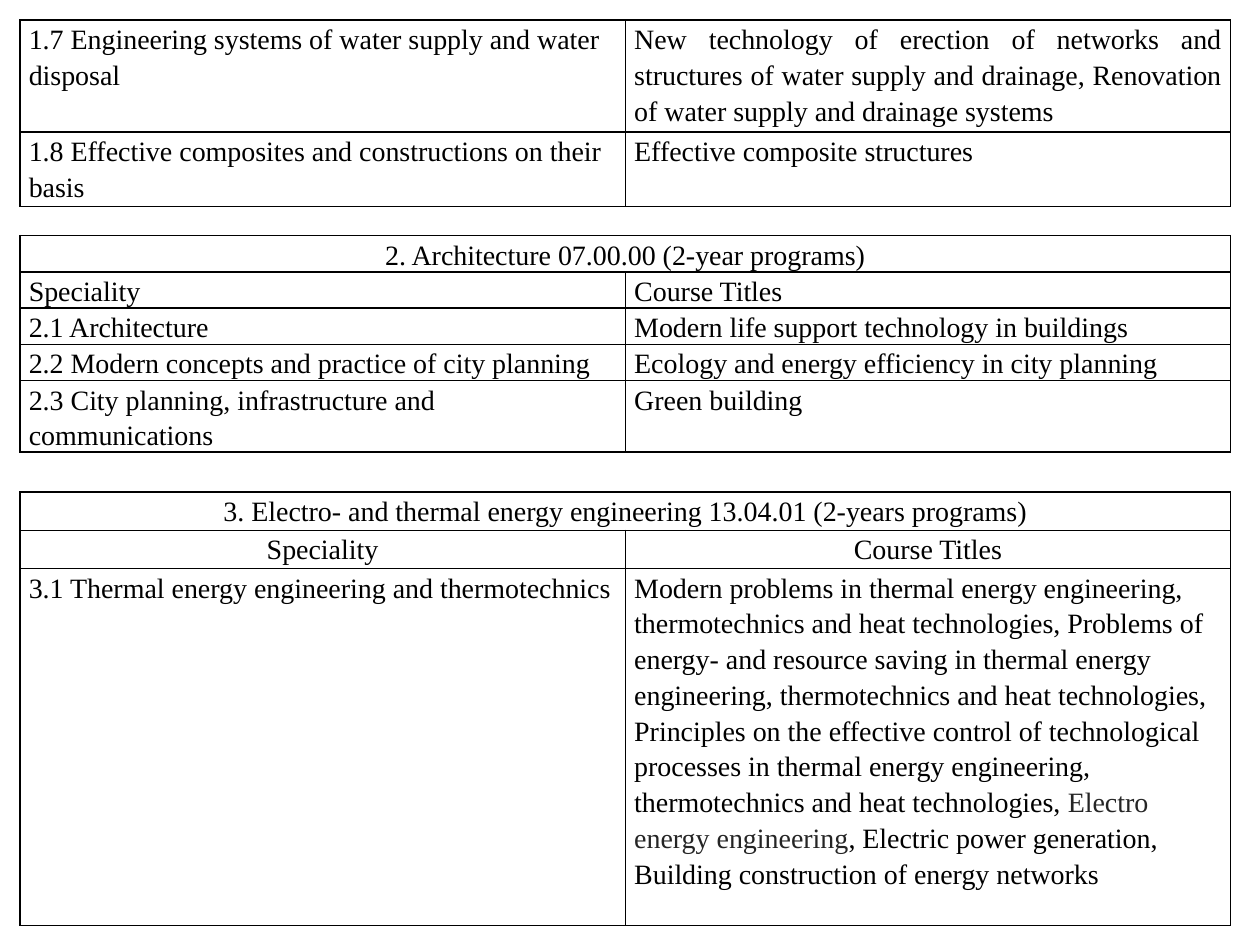
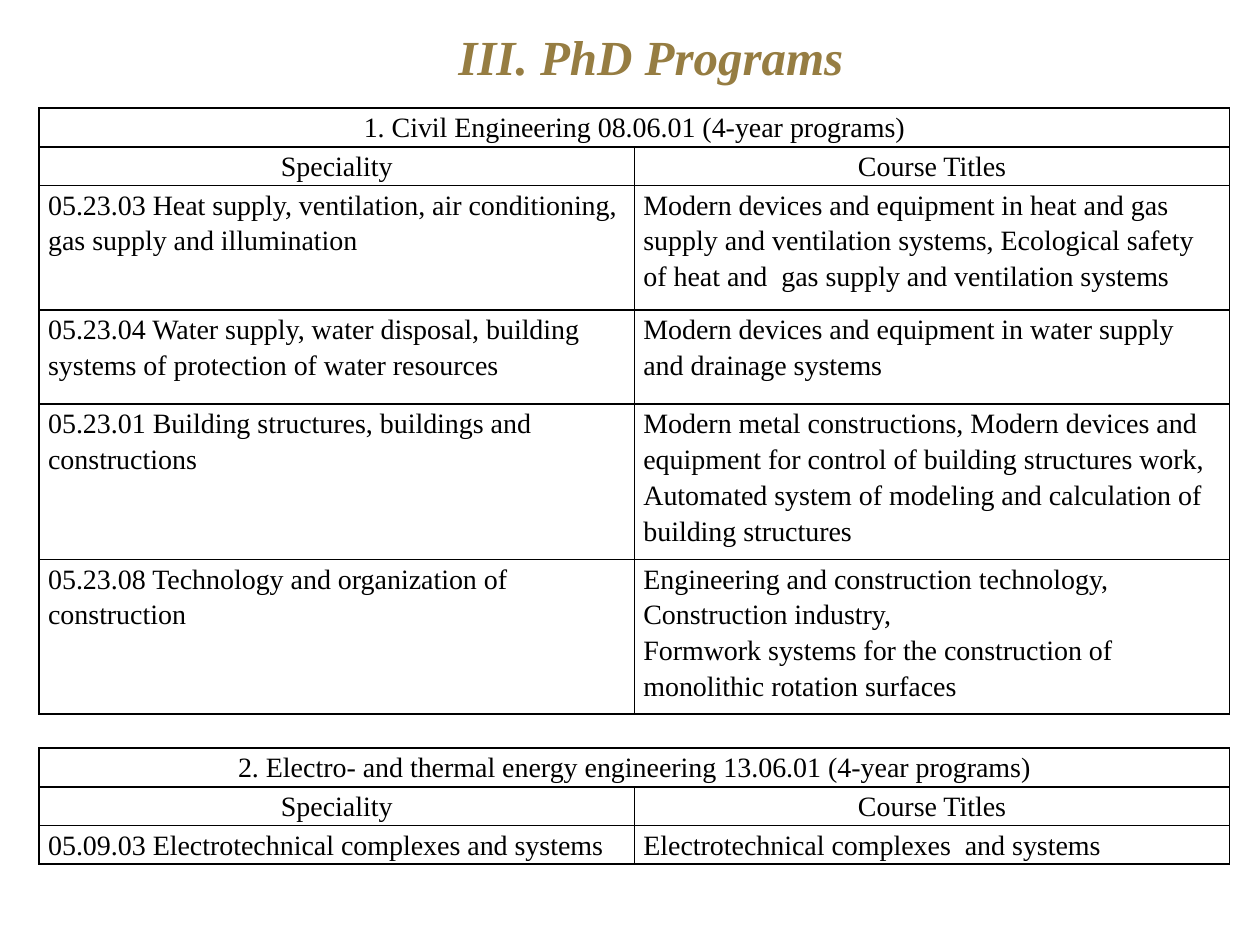
"""Builds two slides of course tables for master and PhD programs."""
from dataclasses import dataclass

from lxml import etree
from pptx import Presentation
from pptx.dml.color import RGBColor
from pptx.enum.text import MSO_ANCHOR, MSO_AUTO_SIZE, PP_ALIGN
from pptx.oxml.ns import qn
from pptx.util import Cm, Pt

LEFT, CENTER, JUSTIFY = PP_ALIGN.LEFT, PP_ALIGN.CENTER, PP_ALIGN.JUSTIFY
MIDDLE = MSO_ANCHOR.MIDDLE
GROW = MSO_AUTO_SIZE.SHAPE_TO_FIT_TEXT


@dataclass(frozen=True)
class Theme:
    font: str = "Times New Roman"
    ink: str = "000000"
    soft_ink: str = "252525"
    gold: str = "967D42"
    paper: str = "FFFFFF"
    body_pt: int = 16
    title_pt: int = 28
    border_pt: int = 1
    spacing: float = 1.15
    inset: float = 0.18


THEME = Theme()
HEADINGS = ("Speciality", "Course Titles")
BODY = {"size": Pt(THEME.body_pt), "name": THEME.font}
TITLE = {"size": Pt(THEME.title_pt), "name": THEME.font, "bold": True, "italic": True}

SLIDES = [
    {
        "left": 0.4, "width": 24.41,
        "tables": [
            {
                "top": 0.4, "heights": [2.26, 1.5], "body_align": {(0, 1): JUSTIFY},
                "rows": [
                    ("1.7 Engineering systems of water supply and water disposal",
                     "New technology of erection of networks and structures of water supply "
                     "and drainage, Renovation of water supply and drainage systems"),
                    ("1.8 Effective composites and constructions on their basis",
                     "Effective composite structures"),
                ],
            },
            {
                "top": 4.75, "heights": [0.73] * 4 + [1.43], "heading_align": LEFT,
                "caption": "2. Architecture 07.00.00 (2-year programs)",
                "rows": [
                    ("2.1 Architecture", "Modern life support technology in buildings"),
                    ("2.2 Modern concepts and practice of city planning",
                     "Ecology and energy efficiency in city planning"),
                    ("2.3 City planning, infrastructure and communications",
                     "Green building"),
                ],
            },
            {
                "top": 9.92, "heights": [0.77, 0.77, 7.2],
                "caption": "3. Electro- and thermal energy engineering 13.04.01 (2-years programs)",
                "rows": [
                    ("3.1 Thermal energy engineering and thermotechnics",
                     [[("Modern problems in thermal energy engineering, thermotechnics and "
                        "heat technologies, Problems of energy- and resource saving in thermal "
                        "energy engineering, thermotechnics and heat technologies, Principles "
                        "on the effective control of technological processes in thermal energy "
                        "engineering, thermotechnics and heat technologies, ", THEME.ink),
                       ("Electro energy engineering", THEME.soft_ink),
                       (", Electric power generation, Building construction of energy networks",
                        THEME.ink)]]),
                ],
            },
        ],
    },
    {
        "title": "III. PhD Programs", "left": 0.79, "width": 24.0,
        "tables": [
            {
                "top": 2.18, "heights": [0.78, 0.78, 2.51, 1.9, 3.13, 3.1],
                "caption": "1. Civil Engineering 08.06.01 (4-year programs)",
                "rows": [
                    ("05.23.03 Heat supply, ventilation, air conditioning, gas supply and "
                     "illumination",
                     "Modern devices and equipment in heat and gas supply and ventilation "
                     "systems, Ecological safety of heat and  gas supply and ventilation systems"),
                    ("05.23.04 Water supply, water disposal, building systems of protection "
                     "of water resources",
                     "Modern devices and equipment in water supply and drainage systems"),
                    ("05.23.01 Building structures, buildings and constructions",
                     "Modern metal constructions, Modern devices and equipment for control of "
                     "building structures work, Automated system of modeling and calculation "
                     "of building structures"),
                    ("05.23.08 Technology and organization of construction",
                     [[("Engineering and construction technology, Construction industry,",
                        THEME.ink)],
                      [("Formwork systems for the construction of monolithic rotation surfaces",
                        THEME.ink)]]),
                ],
            },
            {
                "top": 15.08, "heights": [0.78] * 3,
                "caption": "2. Electro- and thermal energy engineering 13.06.01 (4-year programs)",
                "rows": [("05.09.03 Electrotechnical complexes and systems",
                          "Electrotechnical complexes  and systems")],
            },
        ],
    },
]


def apply(target, values):
    for name, value in values.items():
        setattr(target, name, value)


def write(tf, content, align, style, color=THEME.ink, spacing=None):
    paragraphs = [[(content, color)]] if isinstance(content, str) else content
    for i, runs in enumerate(paragraphs):
        p = tf.add_paragraph() if i else tf.paragraphs[0]
        apply(p, {"alignment": align, "line_spacing": spacing})
        for text, shade in runs:
            r = p.add_run()
            r.text = text
            apply(r.font, style)
            r.font.color.rgb = RGBColor.from_string(shade)


def format_cell(cell):
    side = Cm(THEME.inset)
    apply(cell, {"margin_left": side, "margin_right": side,
                 "margin_top": 0, "margin_bottom": 0})
    tcPr = cell._tc.get_or_add_tcPr()
    for edge in ("lnL", "lnR", "lnT", "lnB"):
        ln = etree.SubElement(tcPr, qn(f"a:{edge}"), w=str(Pt(THEME.border_pt)))
        fill = etree.SubElement(ln, qn("a:solidFill"))
        etree.SubElement(fill, qn("a:srgbClr"), val=THEME.ink)
    cell.fill.solid()
    cell.fill.fore_color.rgb = RGBColor.from_string(THEME.paper)


def add_course_table(s, spec, left, width):
    caption = spec.get("caption")
    heading_align = spec.get("heading_align", CENTER)
    head = [((caption, ""), CENTER), (HEADINGS, heading_align)] if caption else []
    rows = head + [(row, LEFT) for row in spec["rows"]]
    heights = spec["heights"]
    table = s.shapes.add_table(len(rows), 2, Cm(left), Cm(spec["top"]),
                               Cm(width), Cm(sum(heights))).table
    apply(table, {"first_row": False, "horz_banding": False})
    for column in table.columns:
        column.width = Cm(width / 2)
    if caption:
        table.cell(0, 0).merge(table.cell(0, 1))
    for i, (row, align) in enumerate(rows):
        table.rows[i].height = Cm(heights[i])
        for j, content in enumerate(row):
            cell = table.cell(i, j)
            format_cell(cell)
            if content:
                cell_align = spec.get("body_align", {}).get((i, j), align)
                write(cell.text_frame, content, cell_align, BODY, spacing=THEME.spacing)


def add_title(s, text):
    tf = s.shapes.add_textbox(Cm(8.94), Cm(0.4), Cm(8.36), Cm(1.45)).text_frame
    apply(tf, {"word_wrap": False, "auto_size": GROW, "vertical_anchor": MIDDLE})
    write(tf, text, CENTER, TITLE, THEME.gold)


def main():
    prs = Presentation()
    apply(prs, {"slide_width": Cm(25.4), "slide_height": Cm(19.05)})
    for page in SLIDES:
        s = prs.slides.add_slide(prs.slide_layouts[6])
        if "title" in page:
            add_title(s, page["title"])
        for spec in page["tables"]:
            add_course_table(s, spec, page["left"], page["width"])
    prs.save("out.pptx")


if __name__ == "__main__":
    main()
